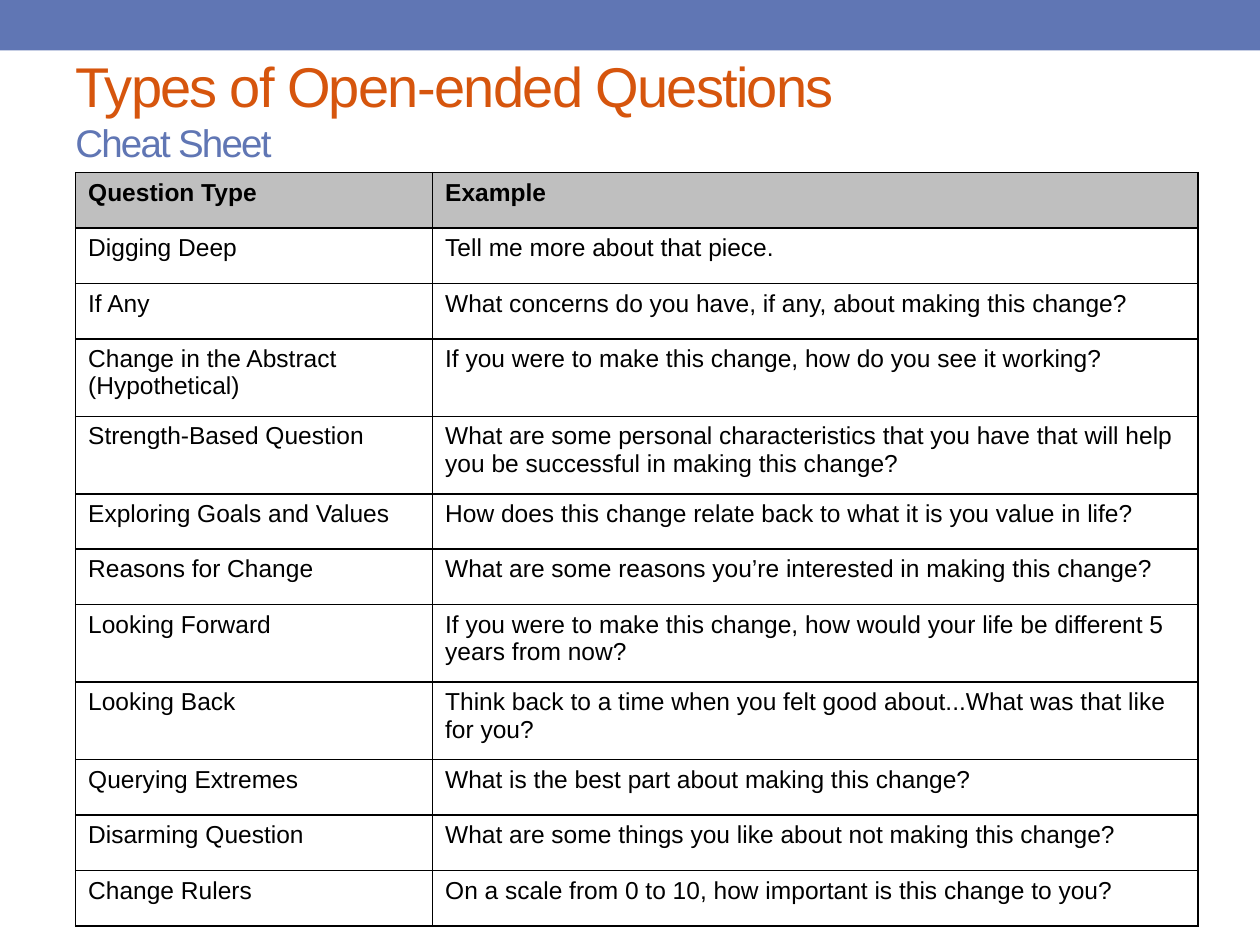
from lxml import etree
from pptx import Presentation
from pptx.dml.color import RGBColor
from pptx.enum.shapes import MSO_SHAPE
from pptx.enum.text import MSO_ANCHOR
from pptx.oxml.ns import qn
from pptx.util import Inches, Pt

RECT, MIDDLE = MSO_SHAPE.RECTANGLE, MSO_ANCHOR.MIDDLE

TITLE, SUBTITLE = "Types of Open-ended Questions", "Cheat Sheet"
HEADER = ("Question Type", "Example")
# question type, example, lines the row holds
QUESTIONS = [
    ("Digging Deep", "Tell me more about that piece.", 1),
    ("If Any", "What concerns do you have, if any, about making this change?", 1),
    ("Change in the Abstract (Hypothetical)",
     "If you were to make this change, how do you see it working?", 2),
    ("Strength-Based Question",
     "What are some personal characteristics that you have that will help "
     "you be successful in making this change?", 2),
    ("Exploring Goals and Values",
     "How does this change relate back to what it is you value in life?", 1),
    ("Reasons for Change",
     "What are some reasons you’re interested in making this change?", 1),
    ("Looking Forward",
     "If you were to make this change, how would your life be different 5 "
     "years from now?", 2),
    ("Looking Back",
     "Think back to a time when you felt good about...What was that like "
     "for you?", 2),
    ("Querying Extremes", "What is the best part about making this change?", 1),
    ("Disarming Question",
     "What are some things you like about not making this change?", 1),
    ("Change Rulers",
     "On a scale from 0 to 10, how important is this change to you?", 1),
]

THEME = dict(font="Arial", band="6076B4", title="D6550D", subtitle="6076B4",
             text="000000", header="BFBFBF", border="000000",
             title_size=32, subtitle_size=22, cell_size=14, border_width=1)

SLIDE_W, SLIDE_H = 10, 7.5
BAND_H = 0.4
TITLE_BOX = (0.5, 0.32, 9, 1.08)
TABLE_LEFT, TABLE_TOP, TABLE_W = 0.6, 1.37, 8.91
TYPE_SHARE = 0.318
ROW_HEIGHT = {1: 0.44, 2: 0.615}


def rgb(name):
    return RGBColor.from_string(THEME[name])


def add_text(p, text, size, color, bold=False, spacing=None):
    r = p.add_run()
    r.text = text
    r.font.name, r.font.size, r.font.bold = THEME["font"], Pt(THEME[size]), bold
    r.font.color.rgb = rgb(color)
    if spacing is not None:
        r._r.get_or_add_rPr().set("spc", str(spacing * 100))


def add_borders(cell):
    tcPr = cell._tc.get_or_add_tcPr()
    for side in ("lnL", "lnR", "lnT", "lnB"):
        ln = etree.SubElement(tcPr, qn(f"a:{side}"), w=str(Pt(THEME["border_width"])))
        fill = etree.SubElement(ln, qn("a:solidFill"))
        etree.SubElement(fill, qn("a:srgbClr"), val=THEME["border"])


def add_band(s):
    sp = s.shapes.add_shape(RECT, 0, 0, Inches(SLIDE_W), Inches(BAND_H))
    sp.shadow.inherit = False
    sp.fill.solid()
    sp.fill.fore_color.rgb = rgb("band")
    sp.line.fill.background()


def add_title(s):
    tf = s.shapes.add_textbox(*map(Inches, TITLE_BOX)).text_frame
    tf.word_wrap, tf.vertical_anchor = True, MIDDLE
    p = tf.paragraphs[0]
    add_text(p, TITLE, "title_size", "title", spacing=-1)
    p.add_line_break()
    add_text(p, SUBTITLE, "subtitle_size", "subtitle", spacing=-1)


def add_questions(s):
    rows = [(*HEADER, 1), *QUESTIONS]
    heights = [ROW_HEIGHT[lines] for *_, lines in rows]
    table = s.shapes.add_table(
        len(rows), len(HEADER), Inches(TABLE_LEFT), Inches(TABLE_TOP),
        Inches(TABLE_W), Inches(sum(heights))).table
    table.horz_banding = False
    for col, share in zip(table.columns, (TYPE_SHARE, 1 - TYPE_SHARE)):
        col.width = Inches(TABLE_W * share)
    for i, (*texts, _) in enumerate(rows):
        table.rows[i].height = Inches(heights[i])
        for j, text in enumerate(texts):
            cell = table.cell(i, j)
            add_borders(cell)
            if i == 0:
                cell.fill.solid()
                cell.fill.fore_color.rgb = rgb("header")
            else:
                cell.fill.background()
            add_text(cell.text_frame.paragraphs[0], text, "cell_size", "text",
                     bold=i == 0)


def main():
    prs = Presentation()
    prs.slide_width, prs.slide_height = Inches(SLIDE_W), Inches(SLIDE_H)
    s = prs.slides.add_slide(prs.slide_layouts[6])
    add_band(s)
    add_title(s)
    add_questions(s)
    prs.save("out.pptx")


if __name__ == "__main__":
    main()
